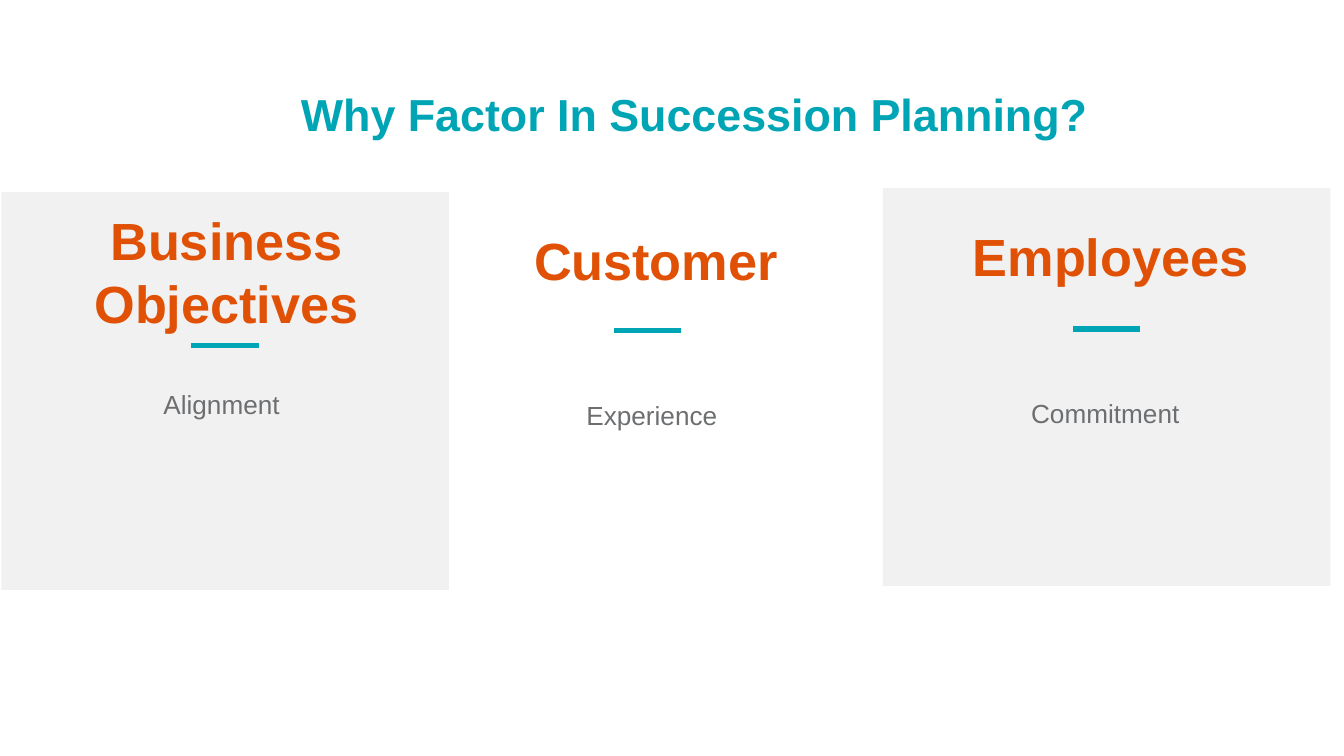
from lxml import etree
from pptx import Presentation
from pptx import util as u
from pptx.dml import color
from pptx.enum import shapes, text
from pptx.oxml import ns

Pt = u.Pt
TEAL, ORANGE, GREY, PANEL = "00A5B5", "E05106", "6C6E70", "F1F1F2"
CARD_W, CARD_H, RULE_W = 239.76, 213.12, 36


def rgb(value):
    """Turn a hex string into a colour."""
    return color.RGBColor.from_string(value)


def write(tf, content, size, hex_color, bold=False, align=text.PP_ALIGN.CENTER, spacing=None):
    """Write one formatted paragraph into a text frame."""
    tf.word_wrap = True
    p = tf.paragraphs[0]
    p.alignment = align
    if spacing:
        p.line_spacing = spacing
    r = p.add_run()
    r.text = content
    r.font.name = "Arial"
    r.font.size = Pt(size)
    r.font.bold = bold
    r.font.color.rgb = rgb(hex_color)


def add_label(s, x, y, w, h, content, **fmt):
    """Add a text box with narrow margins that fits its text."""
    tf = s.shapes.add_textbox(Pt(x), Pt(y), Pt(w), Pt(h)).text_frame
    tf.margin_left = tf.margin_right = Pt(3)
    tf.margin_top = tf.margin_bottom = Pt(1.5)
    write(tf, content, **fmt)
    tf.auto_size = text.MSO_AUTO_SIZE.SHAPE_TO_FIT_TEXT


def add_rule(s, x, y, w):
    """Add a short horizontal accent line."""
    line = s.shapes.add_connector(shapes.MSO_CONNECTOR.STRAIGHT, Pt(x), Pt(y), Pt(x + w), Pt(y))
    line.line.color.rgb = rgb(TEAL)
    line.line.width = Pt(3)
    etree.SubElement(line._element.spPr, ns.qn("a:effectLst"))


def add_panel(s, x, y, w, h):
    """Add a plain filled rectangle."""
    sp = s.shapes.add_shape(shapes.MSO_SHAPE.RECTANGLE, Pt(x), Pt(y), Pt(w), Pt(h))
    sp.shadow.inherit = False
    sp.fill.solid()
    sp.fill.fore_color.rgb = rgb(PANEL)
    sp.line.fill.background()


def add_card(s, x, y, filled, heading, heading_box, rule_y, body, body_box, spacing=None):
    """Place a heading, accent line and body relative to the card corner."""
    if filled:
        add_panel(s, x, y, CARD_W, CARD_H)
    hx, hy, hw, hh = heading_box
    bx, by, bw, bh = body_box
    add_label(s, x + bx, y + by, bw, bh, body, size=14, hex_color=GREY, spacing=spacing)
    add_label(s, x + hx, y + hy, hw, hh, heading, size=28, hex_color=ORANGE, bold=True)
    add_rule(s, x + (CARD_W - RULE_W) / 2, y + rule_y, RULE_W)


def add_title(s, x, y, w, h, content):
    """Move and format the title placeholder."""
    title = s.shapes.title
    title.left, title.top, title.width, title.height = Pt(x), Pt(y), Pt(w), Pt(h)
    tf = title.text_frame
    tf.vertical_anchor = text.MSO_ANCHOR.TOP
    tf.margin_top = Pt(6)
    tf.margin_bottom = Pt(0)
    write(tf, content, size=24, hex_color=TEAL, bold=True, align=text.PP_ALIGN.LEFT)


def main():
    """Build and save the slide."""
    prs = Presentation()
    prs.slide_width, prs.slide_height = Pt(720), Pt(405)
    s = prs.slides.add_slide(prs.slide_layouts[5])
    add_title(s, 154, 40.3, 437.8, 28.8, "Why Factor In Succession Planning?")
    add_card(s, 0.72, 103, True, "Business Objectives", (36.7, 7.2, 167.8, 70.6), 82.1,
             "Alignment", (44.6, 103.7, 146.9, 19.4))
    add_card(s, 227.2, 103, False, "Customer", (53.6, 18, 141.1, 36.7), 74.1,
             "Experience", (39.9, 100.8, 164.2, 25.2), spacing=1.5)
    add_card(s, 473, 100.8, True, "Employees", (41, 18, 162, 36.7), 75.6,
             "Commitment", (29.5, 102.2, 179.3, 25.2), spacing=1.5)
    prs.save("out.pptx")


if __name__ == "__main__":
    main()
